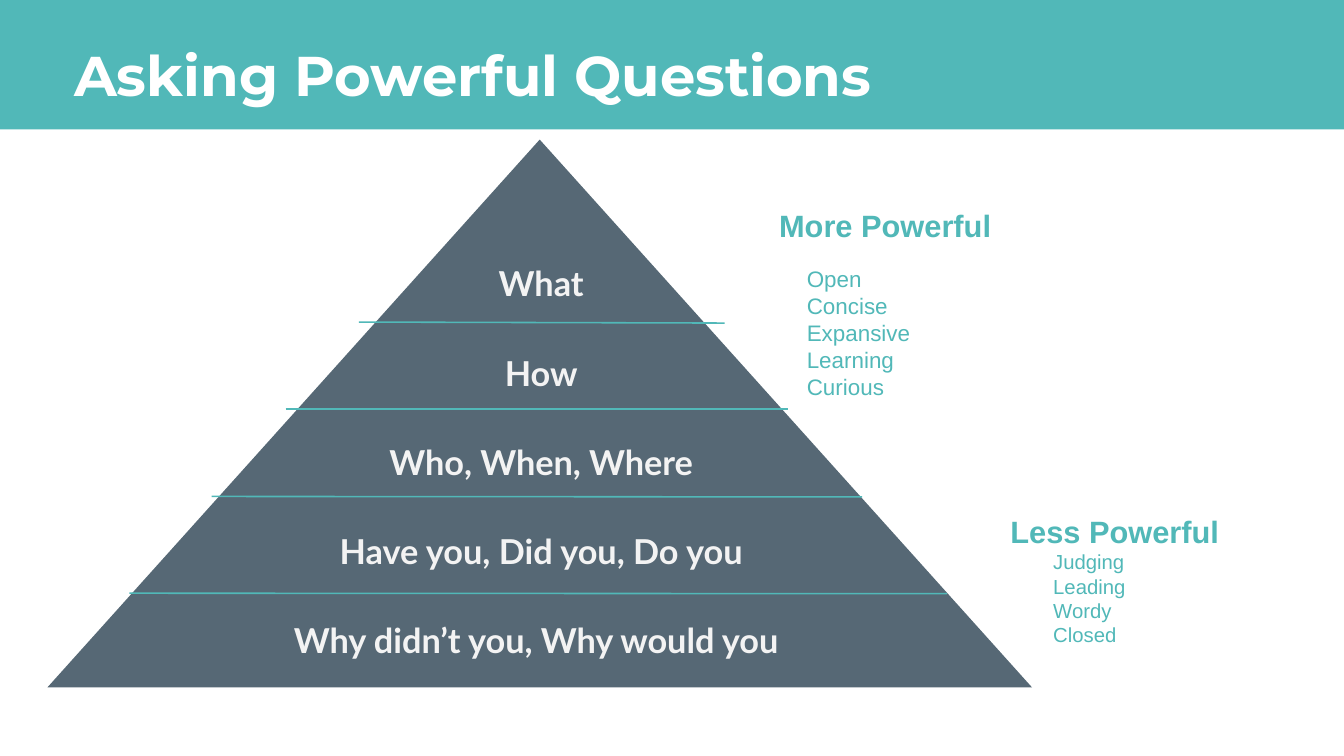
from lxml.etree import SubElement
from pptx import Presentation
from pptx.dml.color import RGBColor
from pptx.enum.shapes import MSO_CONNECTOR, MSO_SHAPE
from pptx.enum.text import MSO_ANCHOR, PP_ALIGN
from pptx.oxml.ns import qn
from pptx.util import Inches, Pt

TEAL = RGBColor(0x51, 0xB8, 0xB8)
SLATE = RGBColor(0x56, 0x68, 0x75)
WHITE = RGBColor(0xFF, 0xFF, 0xFF)
PALE = RGBColor(0xF3, 0xF3, 0xF3)

WIDTH, HEIGHT = 26.67, 15
BAND_HEIGHT = 2.57
TITLE = "Asking Powerful Questions"

# Pyramid levels from the top: text, centre and width of its box
LEVELS = [
    ("What", 10.74, 3.6),
    ("How", 10.74, 5.75),
    ("Who, When, Where", 10.74, 7.36),
    ("Have you, Did you, Do you", 10.74, 9.56),
    ("Why didn’t you, Why would you", 10.64, 16.14),
]
LEVEL_TOP, LEVEL_STEP, LEVEL_HEIGHT = 4.97, 1.77, 1.32

# Lines between levels: left, right, height at the left, height at the right
DIVIDERS = [
    (7.12, 14.38, 6.39, 6.41),
    (5.67, 15.64, 8.12, 8.12),
    (4.2, 17.11, 9.85, 9.86),
    (2.57, 18.79, 11.77, 11.78),
]

# Notes beside the pyramid: lines, box, text size, bold
NOTES = [
    (["More Powerful"], (15.22, 3.87, 5.66, 1.23), 44, True),
    (["Less Powerful"], (19.81, 9.94, 6.69, 1.23), 44, True),
    (["Open", "Concise", "Expansive", "Learning", "Curious"],
     (15.77, 5.02, 4.67, 3.19), 32, False),
    (["Judging", "Leading", "Wordy", "Closed"],
     (20.66, 10.66, 3.2, 2.45), 29, False),
]


def write(frame, lines, *, size, font, color, bold=False,
          align=PP_ALIGN.LEFT, anchor=MSO_ANCHOR.TOP, inset=(0.24, 0.24)):
    frame.word_wrap = True
    frame.vertical_anchor = anchor
    frame.margin_left = frame.margin_right = Inches(inset[0])
    frame.margin_top = frame.margin_bottom = Inches(inset[1])
    for number, line in enumerate(lines):
        paragraph = frame.add_paragraph() if number else frame.paragraphs[0]
        paragraph.alignment = align
        run = paragraph.add_run()
        run.text = line
        run.font.size, run.font.name, run.font.bold = Pt(size), font, bold
        run.font.color.rgb = color


def add_filled(shapes, preset, box, color):
    shape = shapes.add_shape(preset, *map(Inches, box))
    shape.shadow.inherit = False
    shape.fill.solid()
    shape.fill.fore_color.rgb = color
    shape.line.fill.background()
    return shape


def add_divider(shapes, left, right, left_y, right_y):
    divider = shapes.add_connector(
        MSO_CONNECTOR.STRAIGHT, *map(Inches, (left, left_y, right, right_y)))
    divider.line.color.rgb = TEAL
    divider.line.width = Pt(2.25)
    SubElement(divider._element.spPr, qn("a:effectLst"))


def main():
    deck = Presentation()
    deck.slide_width, deck.slide_height = Inches(WIDTH), Inches(HEIGHT)
    slide = deck.slides.add_slide(deck.slide_layouts[5])
    shapes = slide.shapes

    title = shapes.title
    band = add_filled(shapes, MSO_SHAPE.RECTANGLE, (0, 0, WIDTH, BAND_HEIGHT), TEAL)
    title._element.addprevious(band._element)
    title.left, title.top, title.width, title.height = map(
        Inches, (1.32, -1.07, 24.03, 5.08))
    write(title.text_frame, [TITLE], size=80, font="Montserrat", color=WHITE,
          bold=True, anchor=MSO_ANCHOR.MIDDLE, inset=(0.15, 0.07))

    add_filled(shapes, MSO_SHAPE.ISOSCELES_TRIANGLE, (0.94, 2.77, 19.54, 10.87), SLATE)
    for divider in DIVIDERS:
        add_divider(shapes, *divider)

    for lines, box, size, bold in NOTES:
        note = shapes.add_textbox(*map(Inches, box))
        write(note.text_frame, lines, size=size, font="Arial", color=TEAL, bold=bold)

    for row, (question, centre, width) in enumerate(LEVELS):
        box = (centre - width / 2, LEVEL_TOP + row * LEVEL_STEP, width, LEVEL_HEIGHT)
        level = shapes.add_textbox(*map(Inches, box))
        write(level.text_frame, [question], size=49, font="Lato", color=PALE,
              bold=True, align=PP_ALIGN.CENTER)

    deck.save("out.pptx")


if __name__ == "__main__":
    main()
